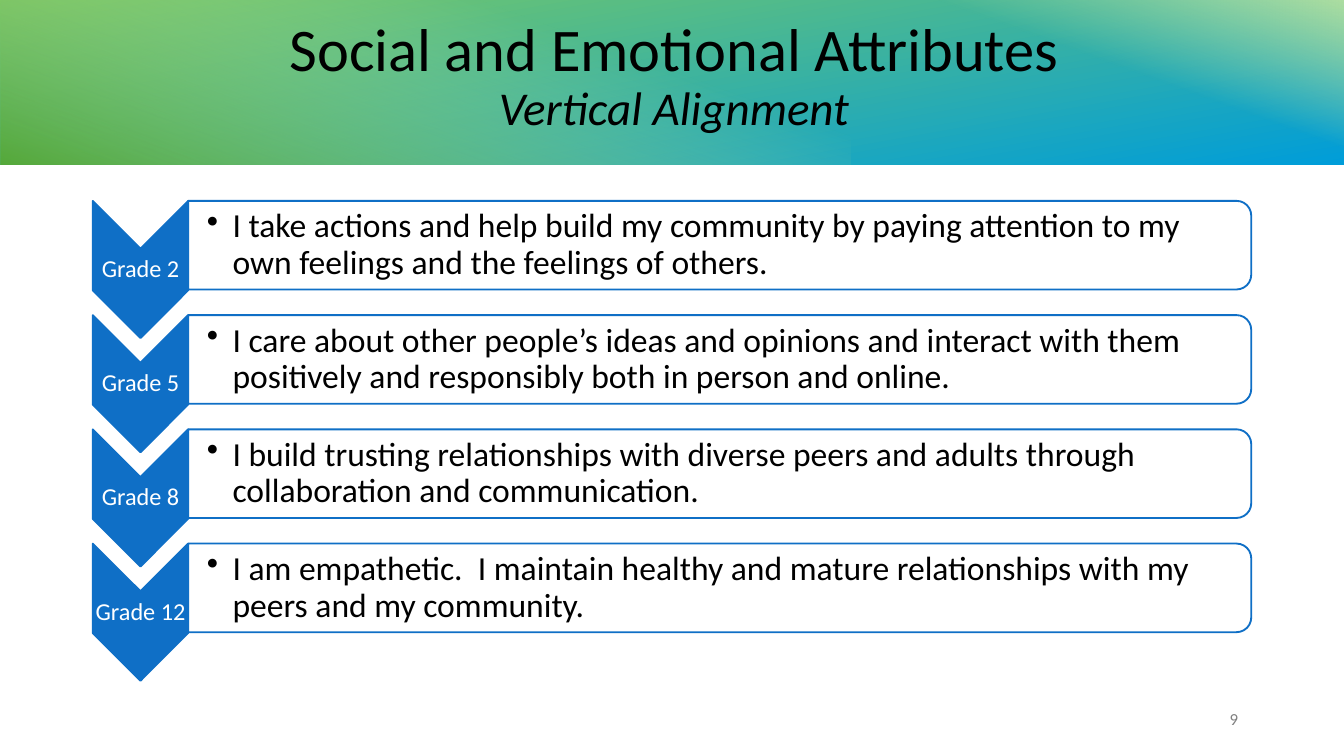
from collections import namedtuple

from lxml.etree import SubElement
from pptx import Presentation
from pptx.dml.color import RGBColor
from pptx.enum.shapes import MSO_SHAPE as Preset
from pptx.enum.text import MSO_ANCHOR as Anchor, PP_ALIGN as Align
from pptx.oxml.ns import qn
from pptx.util import Inches, Pt

# The page is a grid of square cells, 100 columns by 56.25 rows
CELL = Inches(0.1)
COLUMNS, ROWS = 100, 56.25
Box = namedtuple("Box", "left top width height")

FONT = "Calibri"
BLUE, GREEN, PALE, LEAF = "0F6FC6", "7CCA62", "B0DFA1", "55A839"
SKY, WHITE, BLACK, GREY = "009DD9", "FFFFFF", "000000", "808080"

STATEMENTS = [
    ("Grade 2", "I take actions and help build my community by paying attention "
                "to my own feelings and the feelings of others."),
    ("Grade 5", "I care about other people’s ideas and opinions and interact with "
                "them positively and responsibly both in person and online."),
    ("Grade 8", "I build trusting relationships with diverse peers and adults "
                "through collaboration and communication."),
    ("Grade 12", "I am empathetic.  I maintain healthy and mature relationships "
                 "with my peers and my community."),
]


def color(hex_text):
    return RGBColor.from_string(hex_text)


def cells(*counts):
    return [round(count * CELL) for count in counts]


def inside(box, left, top, width, height):
    """A box given in cells from the corner of another box."""
    return Box(box.left + left, box.top + top, width, height)


def add_turned(page, preset, box, rotation):
    """Add a shape turned by a quarter so that it covers the box."""
    left = box.left + (box.width - box.height) / 2
    top = box.top + (box.height - box.width) / 2
    shape = page.shapes.add_shape(preset, *cells(left, top, box.height, box.width))
    shape.rotation = rotation
    shape.shadow.inherit = False
    return shape


def paint(shape, fill):
    shape.fill.solid()
    shape.fill.fore_color.rgb = color(fill)
    shape.line.color.rgb = color(BLUE)
    shape.line.width = Pt(1)


def paint_gradient(shape, angle, stops):
    """Stops are (position, colour, opacity), the numbers in percent."""
    shape.line.fill.background()
    shape.fill.gradient()
    gradient = shape.fill._xPr.find(qn("a:gradFill"))
    gradient.set("rotWithShape", "1")
    stop_list = gradient.find(qn("a:gsLst"))
    for old_stop in list(stop_list):
        stop_list.remove(old_stop)
    for position, tone, opacity in stops:
        stop = SubElement(stop_list, qn("a:gs"), pos=str(position * 1000))
        rgb = SubElement(stop, qn("a:srgbClr"), val=tone)
        SubElement(rgb, qn("a:alpha"), val=str(opacity * 1000))
    direction = gradient.find(qn("a:lin"))
    direction.set("ang", str(angle * 60000))
    direction.set("scaled", "0")


def add_text(page, box, text, size, tone, align, insets=None):
    """Add a one-paragraph text box and return its paragraph."""
    frame = page.shapes.add_textbox(*cells(*box)).text_frame
    frame.word_wrap = True
    frame.vertical_anchor = Anchor.MIDDLE
    if insets:
        (frame.margin_left, frame.margin_top,
         frame.margin_right, frame.margin_bottom) = cells(*insets)
    para = frame.paragraphs[0]
    para.text = text
    para.alignment = align
    para.line_spacing = 0.9
    para.font.name = FONT
    para.font.size = Pt(size)
    para.font.color.rgb = color(tone)
    return para


def add_bullet(para, indent):
    properties = para._p.get_or_add_pPr()
    properties.set("marL", str(indent))
    properties.set("indent", str(-indent))
    bullet = properties.makeelement(qn("a:buChar"), {"char": "•"})
    properties.find(qn("a:defRPr")).addprevious(bullet)


def add_banner(page, box):
    # Layered gradients: full width, right part, left part
    layers = [
        (0, box.width, 270, 170, [(0, GREEN, 100), (100, SKY, 100)]),
        (58.5, 41.5, 270, 20, [(59, PALE, 0), (100, PALE, 100)]),
        (0, 63.3, 90, 20, [(29, PALE, 0), (100, LEAF, 100)]),
    ]
    for left, width, rotation, angle, stops in layers:
        part = inside(box, left, 0, width, box.height)
        layer = add_turned(page, Preset.RECTANGLE, part, rotation)
        paint_gradient(layer, angle, stops)

    # Title and subtitle
    para = add_text(page, inside(box, 7.2, 1, 85.9, 10),
                    "Social and Emotional Attributes", 32.4, BLACK, Align.CENTER)
    para.add_line_break()
    span = para.add_run()
    span.text = "Vertical Alignment"
    span.font.size = Pt(25.2)
    span.font.italic = True


def add_grade(page, box, grade, statement):
    # Arrow with the grade
    arrow_width, bar_height = 7.1, 6.6
    arrow = add_turned(page, Preset.CHEVRON,
                       inside(box, 0, 0, arrow_width, box.height), 90)
    paint(arrow, BLUE)
    add_text(page, inside(box, 0, 3.6, arrow_width, 3), grade, 13, WHITE,
             Align.CENTER, (0.1, 0.1, 0.1, 0.1))

    # Bar with the statement
    bar_width = box.width - arrow_width
    bar = add_turned(page, Preset.ROUND_2_SAME_RECTANGLE,
                     inside(box, arrow_width, 0, bar_width, bar_height), 90)
    paint(bar, WHITE)
    tone = bar.fill._xPr.find(qn("a:solidFill")).find(qn("a:srgbClr"))
    SubElement(tone, qn("a:alpha"), val="90000")
    para = add_text(page, inside(box, arrow_width, 0.3, bar_width - 0.3, 6),
                    statement, 18, BLACK, Align.LEFT, (1.4, 0.1, 0.1, 0.1))
    add_bullet(para, cells(1.9)[0])


def add_grades(page, box, pitch):
    for index, (grade, statement) in enumerate(STATEMENTS):
        row = inside(box, 0, index * pitch, box.width, 10.2)
        add_grade(page, row, grade, statement)


def main():
    deck = Presentation()
    deck.slide_width, deck.slide_height = cells(COLUMNS, ROWS)
    page = deck.slides.add_slide(deck.slide_layouts[6])
    add_banner(page, Box(0, -0.25, COLUMNS, 12.5))
    add_grades(page, Box(6.9, 14.95, 86.2, 35.7), 8.5)
    # Page number
    add_text(page, Box(70.6, 52.1, 22.5, 3), "9", 9, GREY, Align.RIGHT)
    deck.save("out.pptx")


if __name__ == "__main__":
    main()
